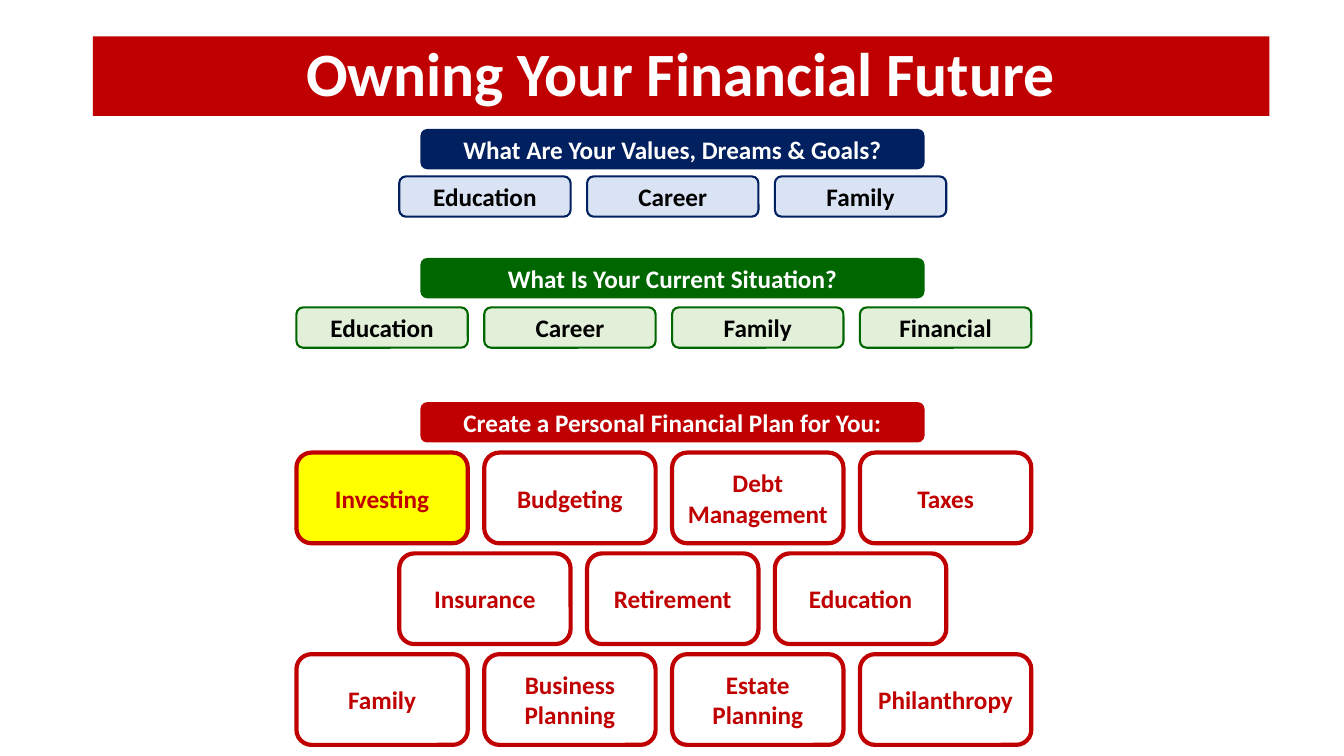
from pptx import Presentation
from pptx.dml.color import RGBColor
from pptx.enum.shapes import MSO_SHAPE as Shape
from pptx.enum.text import MSO_ANCHOR as Anchor, MSO_AUTO_SIZE as AutoSize, PP_ALIGN as Align
from pptx.util import Inches, Pt

NAVY, GREEN, RED = "002060", "006600", "C00000"
PALE_BLUE, PALE_GREEN, YELLOW = "DAE3F3", "E2F0D9", "FFFF00"
WHITE, BLACK = "FFFFFF", "000000"


def color(value):
    return RGBColor.from_string(value)


def write(shape, text, size, text_color):
    frame = shape.text_frame
    frame.word_wrap = True
    frame.auto_size = AutoSize.NONE
    frame.vertical_anchor = Anchor.MIDDLE
    paragraph = frame.paragraphs[0]
    paragraph.text = text
    paragraph.alignment = Align.CENTER
    font_format = {"name": "Calibri", "size": Pt(size), "bold": True}
    for name, value in font_format.items():
        setattr(paragraph.font, name, value)
    paragraph.font.color.rgb = color(text_color)
    return paragraph


presentation = Presentation()
presentation.slide_width = Inches(13.33)
presentation.slide_height = Inches(7.5)
slide = presentation.slides.add_slide(presentation.slide_layouts[5])

# Title band
title = slide.shapes.title
title_place = {"left": 0.92, "top": 0.36, "width": 11.67, "height": 0.79}
for name, value in title_place.items():
    setattr(title, name, Inches(value))
title.fill.solid()
title.fill.fore_color.rgb = color(RED)
write(title, "Owning Your Financial Future", 44, WHITE).line_spacing = 0.9

# Section headings: top, fill, text
headings = [
    (1.28, NAVY, "What Are Your Values, Dreams & Goals?"),
    (2.56, GREEN, "What Is Your Current Situation?"),
    (3.99, RED, "Create a Personal Financial Plan for You:"),
]
boxes = [(4.17, top, 5, 0.4, fill, None, 0, WHITE, text)
         for top, fill, text in headings]

# Rows of topics: left, top, height, fill, line, line width, text colour, topics
BOX_WIDTH, STEP = 1.7, 1.863
WIDE_LEFT, NARROW_LEFT = 2.94, 3.96
rows = [
    (NARROW_LEFT, 1.75, 0.4, PALE_BLUE, NAVY, 1.5, BLACK,
     ["Education", "Career", "Family"]),
    (WIDE_LEFT, 3.05, 0.4, PALE_GREEN, GREEN, 1.5, BLACK,
     ["Education", "Career", "Family", "Financial"]),
    (WIDE_LEFT, 4.49, 0.9, WHITE, RED, 3, RED,
     ["Investing", "Budgeting", "Debt Management", "Taxes"]),
    (NARROW_LEFT, 5.49, 0.9, WHITE, RED, 3, RED,
     ["Insurance", "Retirement", "Education"]),
    (WIDE_LEFT, 6.49, 0.9, WHITE, RED, 3, RED,
     ["Family", "Business Planning", "Estate Planning", "Philanthropy"]),
]
for left, top, height, fill, line, line_width, text_color, topics in rows:
    for column, topic in enumerate(topics):
        box_fill = YELLOW if topic == "Investing" else fill
        boxes.append((left + column * STEP, top, BOX_WIDTH, height,
                      box_fill, line, line_width, text_color, topic))

# Draw headings and topics
for left, top, width, height, fill, line, line_width, text_color, text in boxes:
    shape = slide.shapes.add_shape(
        Shape.ROUNDED_RECTANGLE,
        Inches(left), Inches(top), Inches(width), Inches(height))
    shape.shadow.inherit = False
    shape.fill.solid()
    shape.fill.fore_color.rgb = color(fill)
    if line:
        shape.line.color.rgb = color(line)
        shape.line.width = Pt(line_width)
    else:
        shape.line.fill.background()
    write(shape, text, 18, text_color)

presentation.save("out.pptx")
